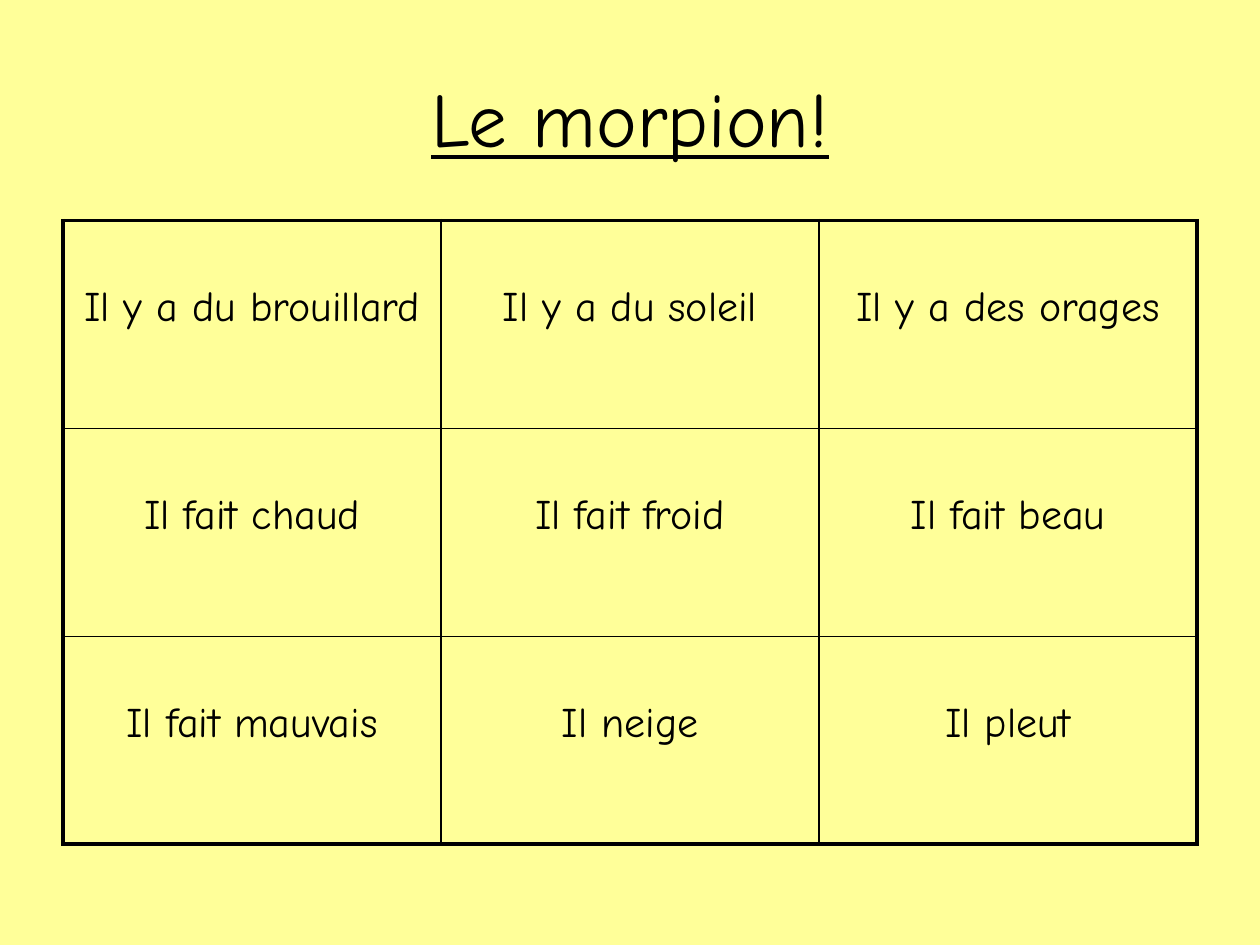
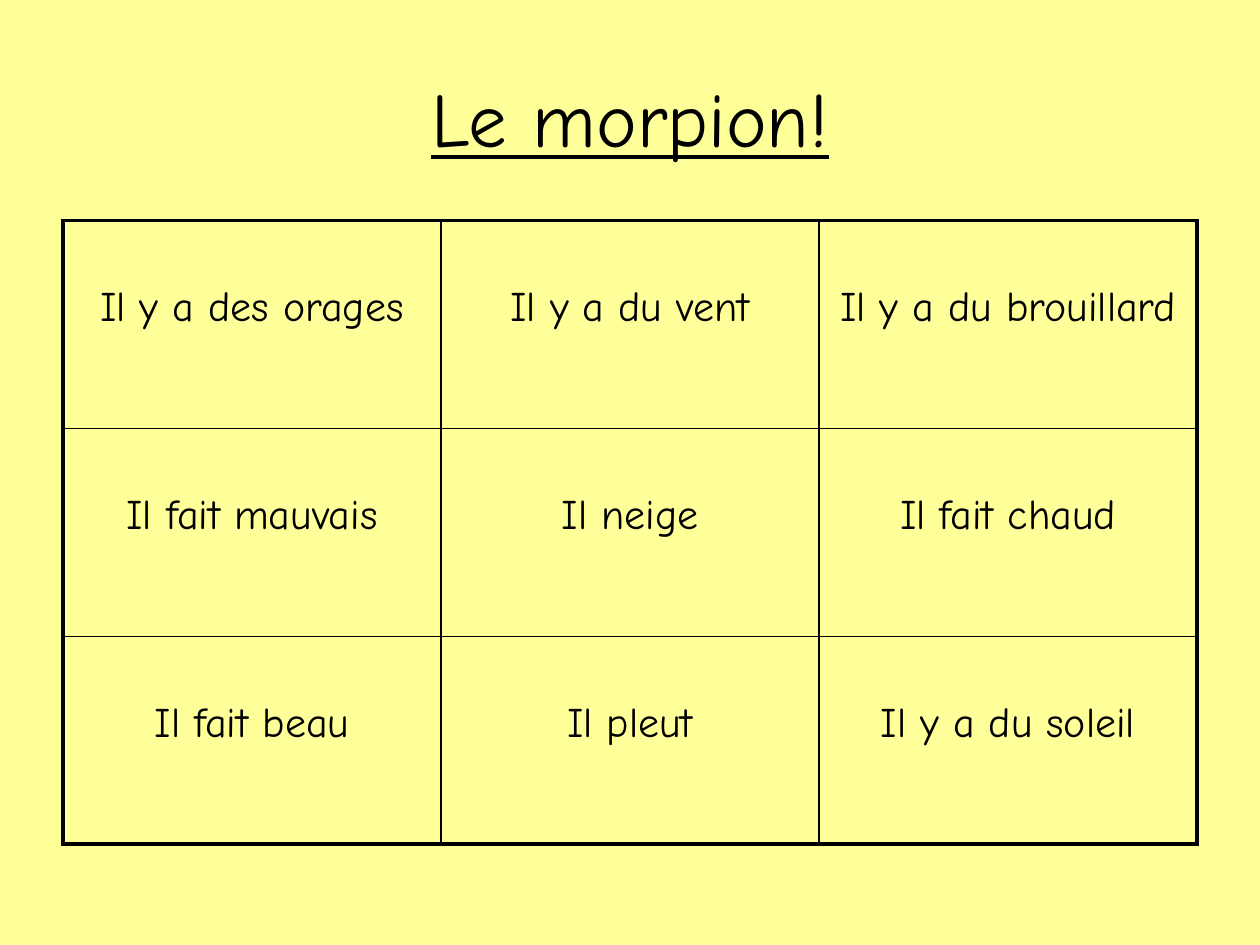
"""Build two noughts-and-crosses grids of French weather phrases."""
from pptx import Presentation
from pptx.dml.color import RGBColor
from pptx.enum.text import MSO_ANCHOR, PP_ALIGN
from pptx.oxml.ns import qn
from pptx.util import Inches, Pt
from lxml import etree

CENTER = PP_ALIGN.CENTER
MIDDLE = MSO_ANCHOR.MIDDLE
TOP = MSO_ANCHOR.TOP
PAPER = "FFFF99"
INK = "000000"
THIN, THICK = 1, 2.25
SIZE = 3
TITLE = "Le morpion!"
HEAD = {"name": "Comic Neue", "size": Pt(44), "underline": True}
BODY = {"name": "Comic Neue", "size": Pt(24), "bold": False}
GRIDS = [
    [
        ["Il y a du brouillard", "Il y a du soleil", "Il y a des orages"],
        ["Il fait chaud", "Il fait froid", "Il fait beau"],
        ["Il fait mauvais", "Il neige", "Il pleut"],
    ],
    [
        ["Il y a des orages", "Il y a du vent", "Il y a du brouillard"],
        ["Il fait mauvais", "Il neige", "Il fait chaud"],
        ["Il fait beau", "Il pleut", "Il y a du soleil"],
    ],
]


def color(code):
    return RGBColor.from_string(code)


def write(frame, text, style):
    para = frame.paragraphs[0]
    para.alignment = CENTER
    run = para.add_run()
    run.text = text
    for key, value in style.items():
        setattr(run.font, key, value)
    run.font.color.rgb = color(INK)


deck = Presentation()
deck.slide_width = Inches(10)
deck.slide_height = Inches(7.5)
blank = deck.slide_layouts[6]
paint = deck.slide_master.background.fill
paint.solid()
paint.fore_color.rgb = color(PAPER)

for grid in GRIDS:
    slide = deck.slides.add_slide(blank)
    box = slide.shapes.add_textbox(Inches(0.5), Inches(0.3), Inches(9), Inches(1.25))
    box.text_frame.word_wrap = True
    box.text_frame.vertical_anchor = MIDDLE
    write(box.text_frame, TITLE, HEAD)

    frame = slide.shapes.add_table(
        SIZE, SIZE, Inches(0.5), Inches(1.75), Inches(9), Inches(4.95))
    table = frame.table
    table.first_row = False
    table.horz_banding = False
    for row, words in enumerate(grid):
        for col, text in enumerate(words):
            cell = table.cell(row, col)
            cell.vertical_anchor = TOP
            cell.margin_top = Inches(0.5)
            write(cell.text_frame, text, BODY)
            edges = {
                "a:lnL": col == 0,
                "a:lnR": col == SIZE - 1,
                "a:lnT": row == 0,
                "a:lnB": row == SIZE - 1,
            }
            props = cell._tc.get_or_add_tcPr()
            for tag, outer in edges.items():
                width = Pt(THICK if outer else THIN)
                line = etree.SubElement(props, qn(tag), w=str(width))
                fill = etree.SubElement(line, qn("a:solidFill"))
                etree.SubElement(fill, qn("a:srgbClr"), val=INK)
            cell.fill.background()

deck.save("out.pptx")
